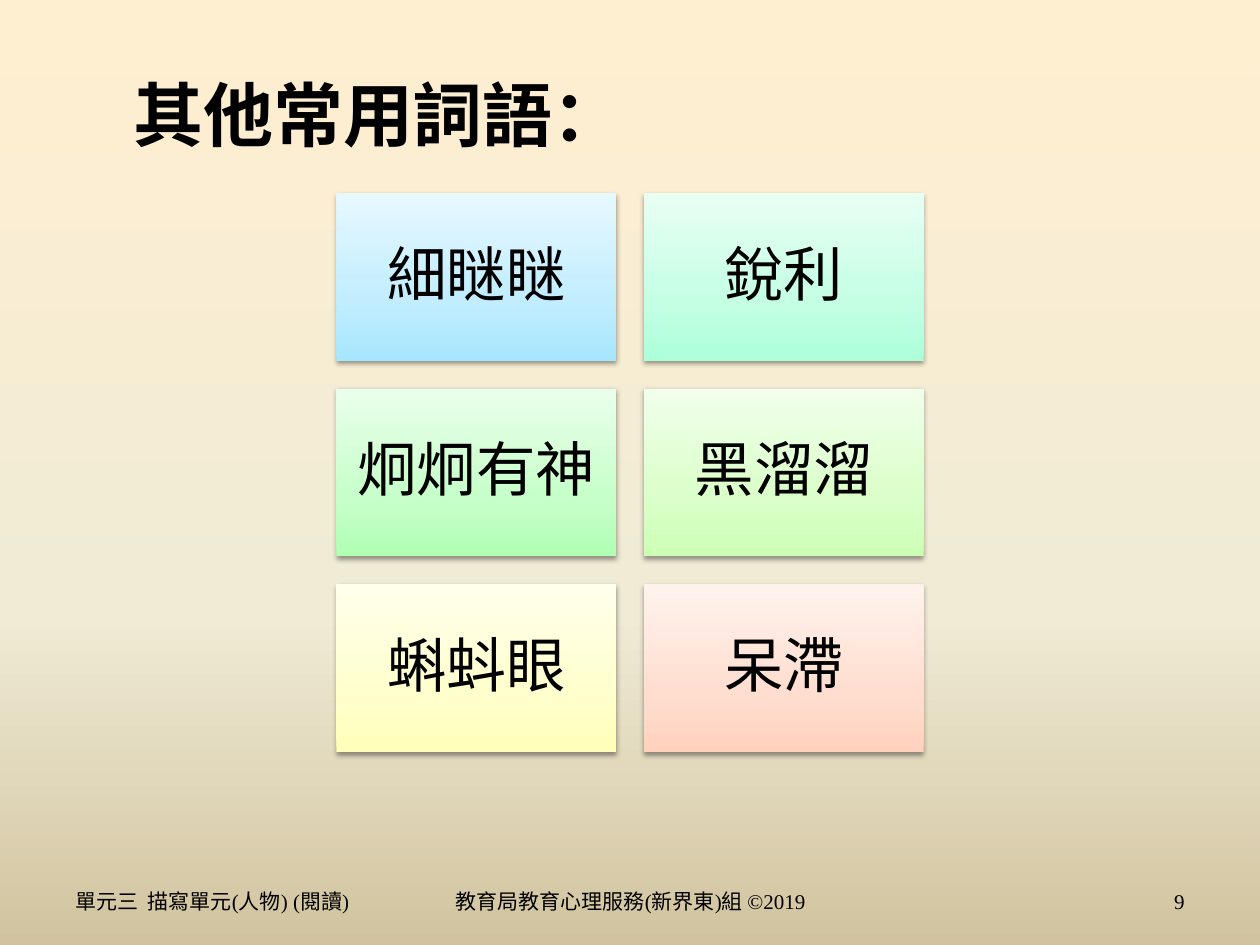
from lxml import etree
from pptx import Presentation
from pptx import util as u
from pptx.dml.color import RGBColor
from pptx.enum import shapes, text
from pptx.oxml.ns import qn

WIDTH, HEIGHT = 10, 7.5
SANS, SERIF = "Noto Sans CJK SC", "Times New Roman"
LEFT, CENTER, RIGHT = text.PP_ALIGN.LEFT, text.PP_ALIGN.CENTER, text.PP_ALIGN.RIGHT

# Each word with its gradient colours, from bottom to top
WORDS = [
    ("細瞇瞇", ("A7E6FF", "C1EDFF", "E7F8FF")),
    ("銳利", ("ACFFD9", "C4FFE4", "E8FFF4")),
    ("炯炯有神", ("B0FFB4", "C7FFCA", "EAFFEB")),
    ("黑溜溜", ("CCFFB4", "DAFFCA", "F1FFEB")),
    ("蝌蚪眼", ("FFFFB9", "FFFFCD", "FFFFEC")),
    ("呆滯", ("FFD2BD", "FFDED0", "FFF2ED")),
]


def color(value):
    return RGBColor.from_string(value)


def inches(box):
    return [u.Inches(length) for length in box]


def add_child(parent, tag, **attributes):
    values = {name: str(value) for name, value in attributes.items()}
    return etree.SubElement(parent, qn(tag), values)


def fill_gradient(owner, fill, positions, colors, angle):
    fill.gradient()
    gradient = next(owner.iter(qn("a:gradFill")))
    stops = gradient.find(qn("a:gsLst"))
    for stop in list(stops):
        stops.remove(stop)
    for position, value in zip(positions, colors):
        stop = add_child(stops, "a:gs", pos=position * 1000)
        add_child(stop, "a:srgbClr", val=value)
    gradient.find(qn("a:lin")).set("ang", str(angle * 60000))


def add_shadow(shape):
    shape.shadow.inherit = False
    effects = shape._element.spPr.find(qn("a:effectLst"))
    shadow = add_child(effects, "a:outerShdw", blurRad=u.Pt(3.1), dist=u.Pt(1.6),
                       dir=90 * 60000, rotWithShape=0)
    black = add_child(shadow, "a:srgbClr", val="000000")
    add_child(black, "a:alpha", val=38000)


def write(shape, words, size, face, align=LEFT, bold=False):
    frame = shape.text_frame
    frame.word_wrap = True
    para = frame.paragraphs[0]
    para.text = words
    para.alignment = align
    font = para.font
    font.size, font.name, font.bold = u.Pt(size), face, bold
    font.color.rgb = color("000000")
    if face == SANS:
        latin = next(para._p.iter(qn("a:latin")))
        latin.addnext(latin.makeelement(qn("a:ea"), {"typeface": face}))
    return frame


def add_title(page, box):
    title = page.shapes.add_textbox(*inches(box))
    write(title, "其他常用詞語：", 40, SANS, bold=True)


def add_word_card(page, box, word, colors):
    card = page.shapes.add_shape(shapes.MSO_SHAPE.RECTANGLE, *inches(box))
    fill_gradient(card._element, card.fill, (0, 35, 100), colors, 270)
    card.line.fill.background()
    add_shadow(card)
    frame = write(card, word, 34, SANS, CENTER)
    frame.vertical_anchor = text.MSO_ANCHOR.MIDDLE
    frame.margin_left = frame.margin_right = u.Inches(0.14)
    frame.margin_top = frame.margin_bottom = u.Inches(0.14)
    frame.paragraphs[0].line_spacing = 0.9


def add_word_grid(page, box, columns=2, rows=3, gap=0.22):
    left, top, width, height = box
    card_width = (width - gap * (columns - 1)) / columns
    card_height = (height - gap * (rows - 1)) / rows
    for index, (word, colors) in enumerate(WORDS):
        row, column = divmod(index, columns)
        place = (left + column * (card_width + gap),
                 top + row * (card_height + gap), card_width, card_height)
        add_word_card(page, place, word, colors)


def add_footer(page, box):
    left, top, width, height = box
    parts = [
        (0, 2.85, "單元三  描寫單元(人物) (閱讀)", LEFT),
        (2.92, 3.17, "教育局教育心理服務(新界東)組 ©2019", CENTER),
        (width - 2.33, 2.33, "9", RIGHT),
    ]
    for offset, part_width, words, align in parts:
        part = page.shapes.add_textbox(*inches((left + offset, top, part_width, height)))
        frame = write(part, words, 12, SERIF, align)
        frame.vertical_anchor = text.MSO_ANCHOR.MIDDLE


def main():
    deck = Presentation()
    deck.slide_width, deck.slide_height = u.Inches(WIDTH), u.Inches(HEIGHT)
    page = deck.slides.add_slide(deck.slide_layouts[6])
    # Background
    fill_gradient(page._element, page.background.fill, (0, 65, 100),
                  ("FFEFD1", "F0EBD5", "D1C39F"), 90)
    # Title, centred word grid and footer
    add_title(page, (0.96, 0.52, 7.74, 0.77))
    grid_width = 4.66
    add_word_grid(page, ((WIDTH - grid_width) / 2, 1.53, grid_width, 4.44))
    add_footer(page, (0.5, 6.95, WIDTH - 1, 0.4))
    deck.save("out.pptx")


if __name__ == "__main__":
    main()
